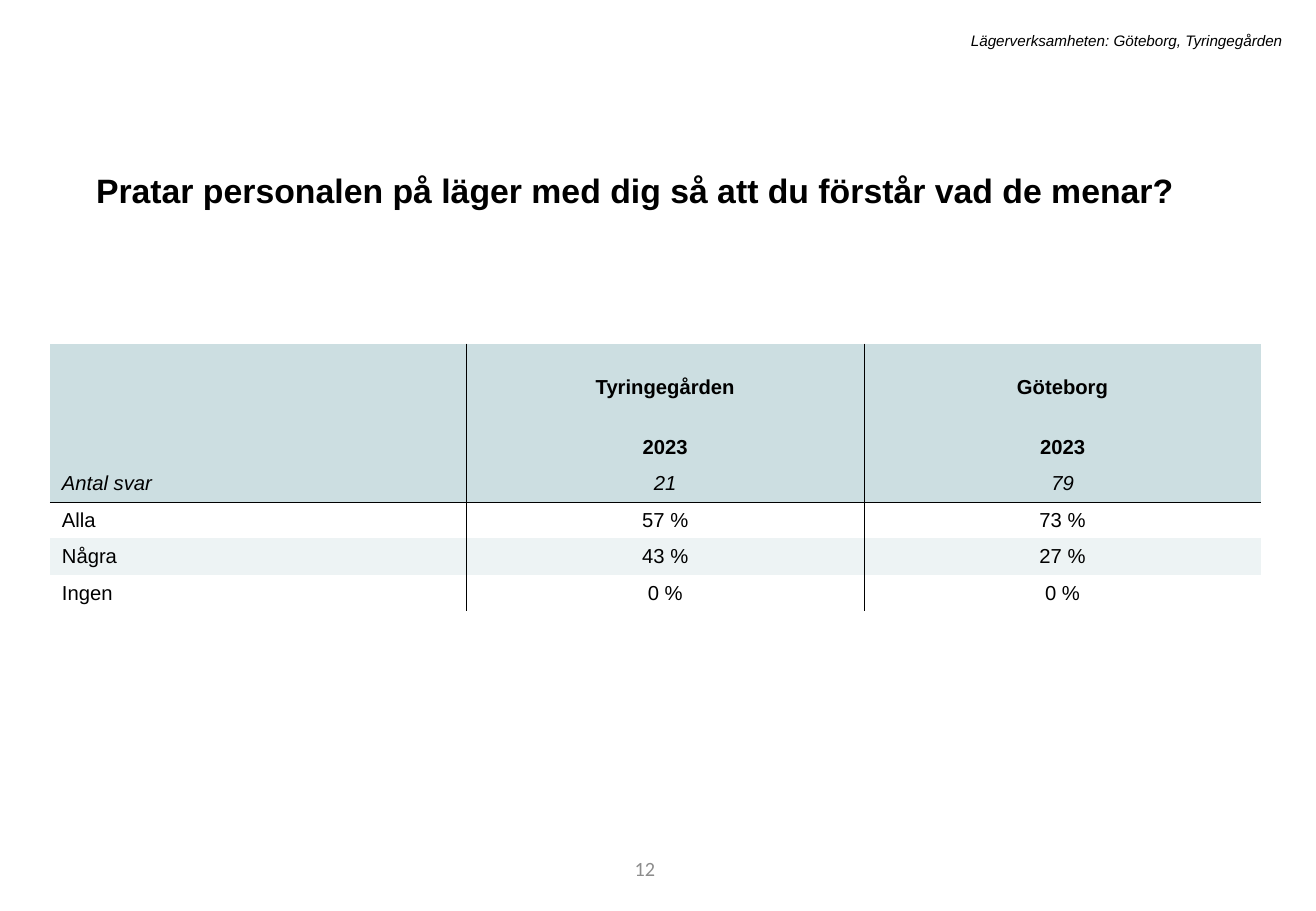
from lxml import etree
from pptx import Presentation
from pptx.dml.color import RGBColor
from pptx.enum.text import MSO_ANCHOR as ANCHOR, MSO_AUTO_SIZE as AUTO, PP_ALIGN as ALIGN
from pptx.oxml.ns import qn
from pptx.util import Inches, Pt

COLORS = {"text": "000000", "muted": "8C8C8C", "line": "000000",
          "header": "CCDEE1", "band": "EDF3F4"}

ANSWERS = [
    ("", "Tyringegården", "Göteborg"),
    ("", "2023", "2023"),
    ("Antal svar", "21", "79"),
    ("Alla", "57 %", "73 %"),
    ("Några", "43 %", "27 %"),
    ("Ingen", "0 %", "0 %"),
]
COL_WIDTHS = [3.43, 3.27, 3.27]
ROW_HEIGHTS = [0.5, 0.5, 0.3, 0.3, 0.3, 0.3]
HEADER_ROWS = 3


def rgb(name):
    return RGBColor.from_string(COLORS[name])


def set_text(tf, text, size, align=ALIGN.LEFT, color="text", font="Arial",
             bold=False, italic=False):
    tf.text = text
    p = tf.paragraphs[0]
    p.alignment = align
    for r in p.runs:
        r.font.name, r.font.size = font, Pt(size)
        r.font.bold, r.font.italic = bold, italic
        r.font.color.rgb = rgb(color)
    return p


def place(sp, box):
    sp.left, sp.top, sp.width, sp.height = (Inches(v) for v in box)


def add_title(slide, box, text):
    sp = slide.shapes.title
    place(sp, box)
    tf = sp.text_frame
    tf.word_wrap, tf.auto_size = True, AUTO.NONE
    tf.vertical_anchor = ANCHOR.TOP
    p = set_text(tf, text, 20, bold=True)
    p.line_spacing, p.space_before = 1.2, Pt(10)


def add_label(slide, box, text, size, anchor=ANCHOR.TOP, **style):
    sp = slide.shapes.add_textbox(*(Inches(v) for v in box))
    tf = sp.text_frame
    tf.word_wrap, tf.vertical_anchor = True, anchor
    set_text(tf, text, size, ALIGN.RIGHT, **style)


def set_borders(cell, sides):
    """Draw thin lines on the given sides; the other sides get none."""
    tc_pr = cell._tc.get_or_add_tcPr()
    for i, side in enumerate("LRTB"):
        ln = etree.Element(qn(f"a:ln{side}"), w=str(Pt(0.25)))
        if side in sides:
            fill = etree.SubElement(ln, qn("a:solidFill"))
            etree.SubElement(fill, qn("a:srgbClr"), val=COLORS["line"])
        else:
            etree.SubElement(ln, qn("a:noFill"))
        tc_pr.insert(i, ln)


def fill_cell(cell, row, col, text):
    header = row < HEADER_ROWS
    set_text(cell.text_frame, text, 12, ALIGN.CENTER if col else ALIGN.LEFT,
             bold=row < HEADER_ROWS - 1, italic=row == HEADER_ROWS - 1)
    cell.vertical_anchor = ANCHOR.BOTTOM if row < HEADER_ROWS - 1 else ANCHOR.MIDDLE
    if header or (row - HEADER_ROWS) % 2:
        cell.fill.solid()
        cell.fill.fore_color.rgb = rgb("header" if header else "band")
    else:
        cell.fill.background()
    sides = ("L" if col else "") + ("R" if col < len(COL_WIDTHS) - 1 else "")
    sides += {HEADER_ROWS - 1: "B", HEADER_ROWS: "T"}.get(row, "")
    set_borders(cell, sides)


def add_answer_table(slide, left, top):
    table = slide.shapes.add_table(
        len(ROW_HEIGHTS), len(COL_WIDTHS), Inches(left), Inches(top),
        Inches(sum(COL_WIDTHS)), Inches(sum(ROW_HEIGHTS))).table
    table.first_row = table.horz_banding = False
    for column, width in zip(table.columns, COL_WIDTHS):
        column.width = Inches(width)
    for row, height in zip(table.rows, ROW_HEIGHTS):
        row.height = Inches(height)
    for i, values in enumerate(ANSWERS):
        for j, text in enumerate(values):
            fill_cell(table.cell(i, j), i, j, text)


def main():
    prs = Presentation()
    prs.slide_width, prs.slide_height = Inches(10.83), Inches(7.5)
    slide = prs.slides.add_slide(prs.slide_layouts[5])
    add_label(slide, (3.05, 6.95, 2.44, 0.4), "12", 12, ANCHOR.MIDDLE,
              color="muted", font="Calibri")
    add_title(slide, (0.69, 1.28, 9.4, 0.47),
              "Pratar personalen på läger med dig så att du förstår vad de menar?")
    add_label(slide, (1.79, 0.21, 8.86, 0.25),
              "Lägerverksamheten: Göteborg, Tyringegården", 9, italic=True)
    add_answer_table(slide, 0.41, 2.83)
    prs.save("out.pptx")


if __name__ == "__main__":
    main()
